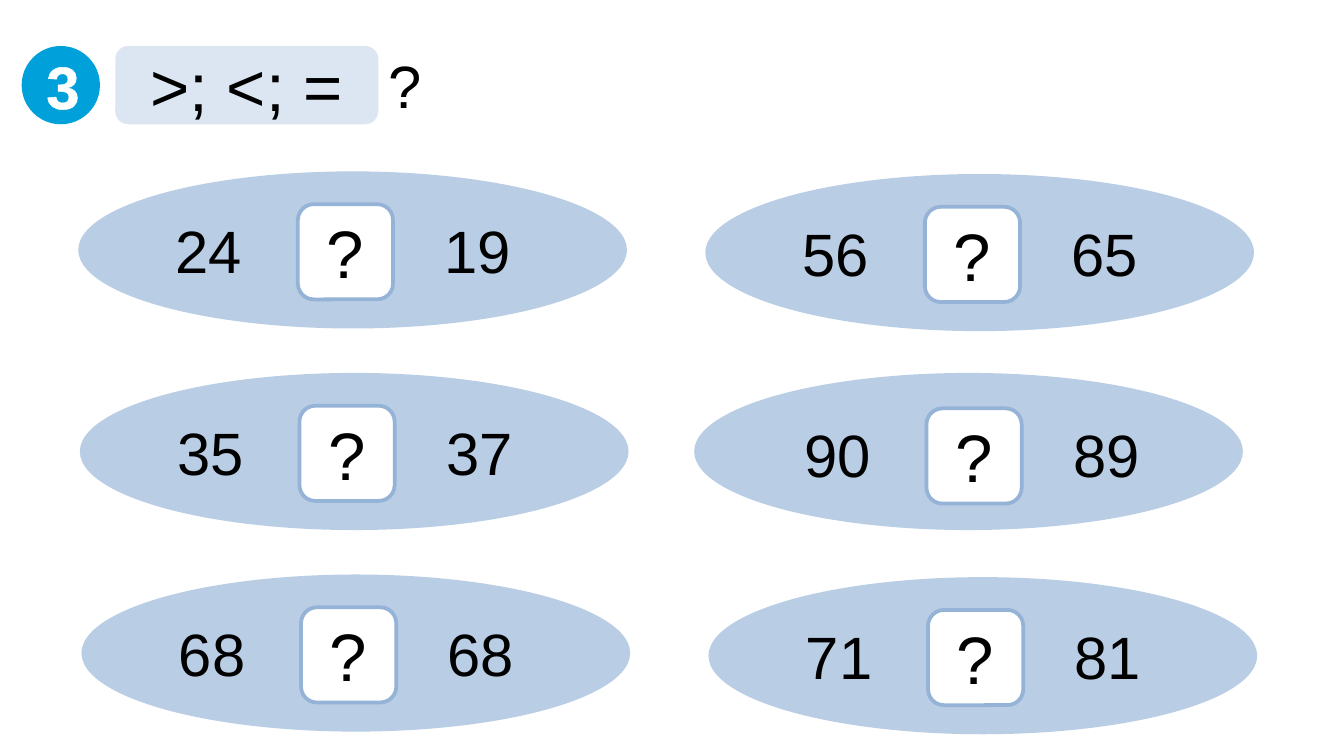
"""Build a slide of number pairs to compare with >, < or =."""
from lxml import etree
from pptx import Presentation
from pptx.dml.color import RGBColor
from pptx.enum.shapes import MSO_SHAPE
from pptx.enum.text import MSO_ANCHOR, PP_ALIGN
from pptx.oxml import parse_xml
from pptx.util import Cm, Pt

OVAL = MSO_SHAPE.OVAL
ROUND = MSO_SHAPE.ROUNDED_RECTANGLE
MIDDLE = MSO_ANCHOR.MIDDLE
CENTER = PP_ALIGN.CENTER
JUSTIFY = PP_ALIGN.JUSTIFY
NS = "http://schemas.openxmlformats.org/drawingml/2006/main"
COLORS = {
    "badge": "00A1DA",
    "banner": "DCE6F2",
    "oval": "B9CDE5",
    "edge": "95B3D7",
    "white": "FFFFFF",
    "black": "000000",
}
PAIRS = [
    [("24", "19"), ("35", "37"), ("68", "68")],
    [("56", "65"), ("90", "89"), ("71", "81")],
]


def add_form(kind, box, fill, edge=None):
    form = slide.shapes.add_shape(kind, *map(Cm, box))
    form.shadow.inherit = False
    form.fill.solid()
    form.fill.fore_color.rgb = RGBColor.from_string(COLORS[fill])
    if edge:
        form.line.color.rgb = RGBColor.from_string(COLORS[edge])
        form.line.width = Pt(2)
    else:
        form.line.fill.background()
    return form


def put_text(form, text, size=32, color="black", align=CENTER, bold=False):
    frame = form.text_frame
    frame.word_wrap = True
    frame.vertical_anchor = MIDDLE
    line = frame.paragraphs[0]
    line.alignment = align
    run = line.add_run()
    run.text = text
    style = {"name": "Arial", "size": Pt(size), "bold": bold}
    for key, value in style.items():
        setattr(run.font, key, value)
    run.font.color.rgb = RGBColor.from_string(COLORS[color])
    return run


deck = Presentation()
deck.slide_width, deck.slide_height = Cm(25.4), Cm(14.29)
slide = deck.slides.add_slide(deck.slide_layouts[6])

mark = slide.shapes.add_textbox(Cm(7.09), Cm(0.86), Cm(2.06), Cm(1.48))
put_text(mark, "?", align=JUSTIFY)

badge = add_form(OVAL, (0.41, 0.87, 1.48, 1.48), "badge")
digit = put_text(badge, "3", color="white", bold=True)
stroke = parse_xml(f'<a:ln xmlns:a="{NS}" w="18415"/>')
paint = etree.SubElement(stroke, f"{{{NS}}}solidFill")
etree.SubElement(paint, f"{{{NS}}}srgbClr", val=COLORS["white"])
digit.font._element.insert(0, stroke)

banner = add_form(ROUND, (2.18, 0.87, 4.97, 1.48), "banner")
put_text(banner, ">; <; =", size=36)

for col, pairs in enumerate(PAIRS):
    for row, pair in enumerate(pairs):
        left = 1.48 + 11.85 * col + 0.03 * row
        top = 3.24 + 0.05 * col + 3.81 * row
        dx, dy = (-0.24, -0.05) if pair == ("90", "89") else (0, 0)
        add_form(OVAL, (left + dx, top + dy, 10.37, 2.97), "oval")
        sums = slide.shapes.add_textbox(
            Cm(left + 0.08), Cm(top + 0.74), Cm(9.86), Cm(1.48))
        put_text(sums, "\t\t".join(pair))
        form = sums.text_frame.paragraphs[0]._p.get_or_add_pPr()
        stops = etree.SubElement(form, f"{{{NS}}}tabLst")
        for stop in (2.54, 5.08):
            etree.SubElement(
                stops, f"{{{NS}}}tab", pos=str(Cm(stop)), algn="l")
        tile = add_form(
            ROUND, (left + 4.15, top + 0.62, 1.8, 1.8), "white", "edge")
        put_text(tile, "?", size=36)

deck.save("out.pptx")
